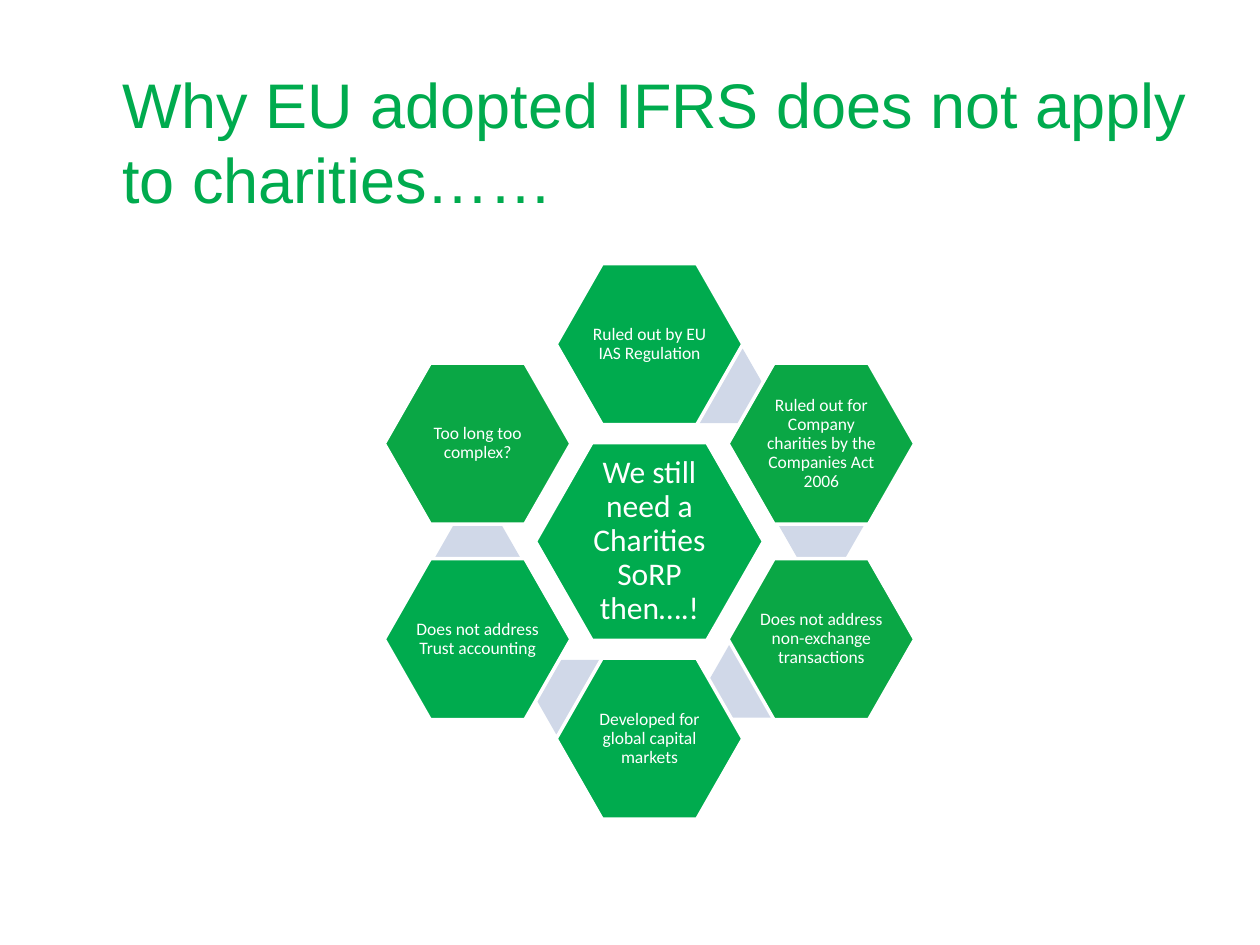
from collections import namedtuple

from pptx import Presentation
from pptx.dml.color import RGBColor
from pptx.enum.shapes import MSO_SHAPE
from pptx.enum.text import MSO_ANCHOR, MSO_AUTO_SIZE, PP_ALIGN
from pptx.util import Inches, Pt

Box = namedtuple("Box", "left top width height")

COLOURS = {"green": "00AB4E", "leaf": "0AA745", "link": "D0D8E8", "white": "FFFFFF"}
HEADING = "Why EU adopted IFRS does not apply to charities……"
CONCLUSION = "We still need a Charities SoRP then….!"
REASONS = [
    ("Ruled out by EU IAS Regulation", "green", 0, -2),
    ("Ruled out for Company charities by the Companies Act 2006", "leaf", 1, -1),
    ("Does not address non-exchange transactions", "leaf", 1, 1),
    ("Developed for global capital markets", "green", 0, 2),
    ("Does not address Trust accounting", "green", -1, 1),
    ("Too long too complex?", "leaf", -1, -1),
]
LINK_CENTRES = [(0.135, -0.28), (0.324, -0.03), (0.193, 0.25), (-0.135, 0.28), (-0.324, 0.03)]
COLUMN_STEP = 0.324
ROW_OFFSETS = {1: 0.176, 2: 0.355}


def colour(name):
    """Return the named colour of the palette."""
    return RGBColor.from_string(COLOURS[name])


def write(frame, text, size, font="Calibri", fill="white", align=PP_ALIGN.CENTER,
          spacing=None, inset=None):
    """Put one formatted paragraph in a text frame."""
    frame.word_wrap = True
    frame.auto_size = MSO_AUTO_SIZE.NONE
    frame.vertical_anchor = MSO_ANCHOR.MIDDLE
    if inset is not None:
        frame.margin_left = frame.margin_right = Inches(inset)
        frame.margin_top = frame.margin_bottom = Inches(inset)
    paragraph = frame.paragraphs[0]
    paragraph.alignment = align
    paragraph.line_spacing = spacing
    run = paragraph.add_run()
    run.text = text
    run.font.size = Pt(size)
    run.font.name = font
    run.font.color.rgb = colour(fill)


def add_hexagon(slide, box, centre, share, fill, outlined=True):
    """Draw a hexagon around a centre given as shares of the box from its middle."""
    width, height = box.width * share[0], box.height * share[1]
    left = box.left + box.width * (0.5 + centre[0]) - width / 2
    top = box.top + box.height * (0.5 + centre[1]) - height / 2
    hexagon = slide.shapes.add_shape(
        MSO_SHAPE.HEXAGON, int(left), int(top), int(width), int(height))
    hexagon.adjustments[0] = 0.286
    hexagon.shadow.inherit = False
    hexagon.fill.solid()
    hexagon.fill.fore_color.rgb = colour(fill)
    if outlined:
        hexagon.line.color.rgb = colour("white")
        hexagon.line.width = Pt(2)
    else:
        hexagon.line.fill.background()
    return hexagon


def add_heading(slide, box):
    """Place the slide title in its box."""
    heading = slide.shapes.title
    heading.left, heading.top, heading.width, heading.height = box
    write(heading.text_frame, HEADING, 36, font="Arial", fill="green", align=PP_ALIGN.LEFT)


def add_reason_ring(slide, box):
    """Draw the conclusion surrounded by linked reasons."""
    conclusion = add_hexagon(slide, box, (0, 0), (0.43, 0.356), "green")
    write(conclusion.text_frame, CONCLUSION, 18, spacing=0.9, inset=0.03)
    for centre in LINK_CENTRES:
        add_hexagon(slide, box, centre, (0.162, 0.134), "link", outlined=False)
    for text, fill, column, row in REASONS:
        offset = ROW_OFFSETS[abs(row)] * (1 if row > 0 else -1)
        reason = add_hexagon(slide, box, (column * COLUMN_STEP, offset), (0.352, 0.29), fill)
        write(reason.text_frame, text, 10, spacing=0.9, inset=0.01)


def main():
    """Build and save the slide."""
    deck = Presentation()
    deck.slide_width, deck.slide_height = Inches(10), Inches(7.5)
    width, height = deck.slide_width, deck.slide_height

    def share(left, top, across, down):
        return Box(int(width * left), int(height * top), int(width * across), int(height * down))

    slide = deck.slides.add_slide(deck.slide_layouts[5])
    add_reason_ring(slide, share(0.305, 0.279, 0.421, 0.588))
    add_heading(slide, share(0.087, 0.041, 0.9, 0.216))
    deck.save("out.pptx")


if __name__ == "__main__":
    main()
